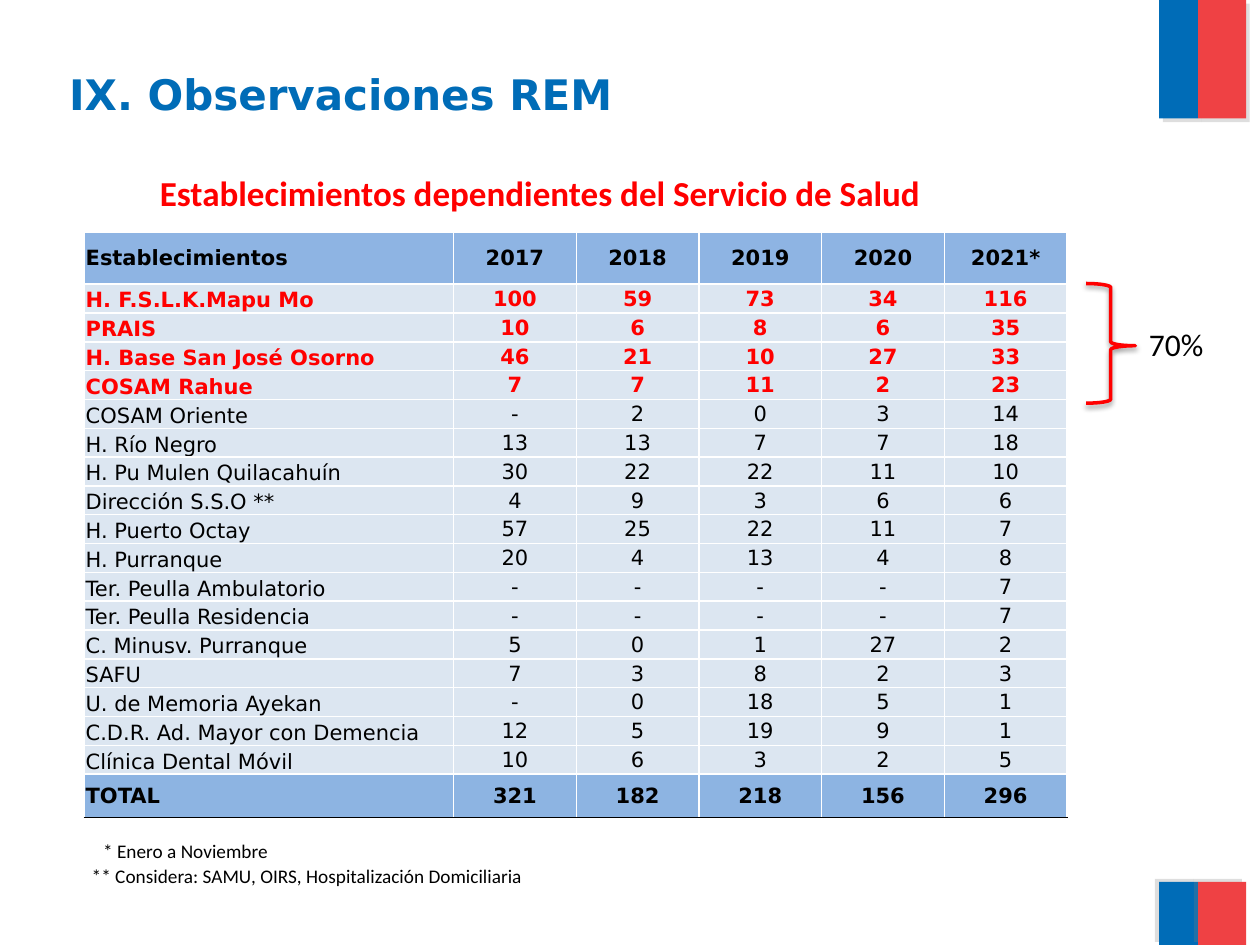
from typing import NamedTuple

from lxml.etree import SubElement
from pptx import Presentation
from pptx.dml.color import RGBColor
from pptx.enum.shapes import MSO_SHAPE
from pptx.enum.text import MSO_ANCHOR, MSO_AUTO_SIZE, PP_ALIGN
from pptx.oxml.ns import qn
from pptx.util import Emu, Inches, Pt

BLUE = RGBColor(0x00, 0x6C, 0xB7)
CORAL = RGBColor(0xEF, 0x41, 0x44)
RED = RGBColor(0xFF, 0x00, 0x00)
BLACK = RGBColor(0x00, 0x00, 0x00)
WHITE = RGBColor(0xFF, 0xFF, 0xFF)
GRAY = RGBColor(0x80, 0x80, 0x80)
HEAD = RGBColor(0x8E, 0xB4, 0xE3)
TOTAL = RGBColor(0x8D, 0xB4, 0xE2)
PALE = RGBColor(0xDC, 0xE6, 0xF1)

# The slide is a grid of 100 columns by 75 rows
WIDE, HIGH = Inches(10), Inches(7.5)
UNIT = WIDE / 100


def span(units: float) -> Emu:
    return Emu(round(units * UNIT))


class Box(NamedTuple):
    left: float
    top: float
    wide: float
    high: float

    def place(self) -> tuple:
        return tuple(span(part) for part in self)


class Shade(NamedTuple):
    color: RGBColor
    alpha: int
    blur: float
    dist: float
    angle: int


class Band(NamedTuple):
    box: Box
    fill: RGBColor
    shade: Shade


class Label(NamedTuple):
    text: str
    box: Box
    font: dict
    frame: dict
    indent: float = 0


class Style(NamedTuple):
    fill: RGBColor
    ink: RGBColor
    bold: bool
    anchor: MSO_ANCHOR
    base: tuple = (WHITE, 1)


def apply(target, values: dict) -> None:
    for name, value in values.items():
        setattr(target, name, value)


def write(para, text: str, font: dict) -> None:
    run = para.add_run()
    run.text = text
    apply(run.font, {key: val for key, val in font.items() if key != "ink"})
    run.font.color.rgb = font["ink"]


def cast(shape, shade: Shade) -> None:
    """Give a shape an outer shadow."""
    shape.shadow.inherit = False
    effects = shape._element.spPr.find(qn("a:effectLst"))
    outer = SubElement(effects, qn("a:outerShdw"), blurRad=str(Pt(shade.blur)),
                       dist=str(Pt(shade.dist)), dir=str(shade.angle * 60000),
                       algn="ctr", rotWithShape="0")
    color = SubElement(outer, qn("a:srgbClr"), val=str(shade.color))
    SubElement(color, qn("a:alpha"), val=str(shade.alpha * 1000))


def draw_band(shapes, band: Band) -> None:
    shape = shapes.add_shape(MSO_SHAPE.RECTANGLE, *band.box.place())
    shape.fill.solid()
    shape.fill.fore_color.rgb = band.fill
    shape.line.fill.background()
    cast(shape, band.shade)


def draw_label(shapes, label: Label) -> None:
    frame = shapes.add_textbox(*label.box.place()).text_frame
    apply(frame, label.frame)
    para = frame.paragraphs[0]
    if label.indent:
        props = para._p.get_or_add_pPr()
        props.set("marL", str(span(label.indent)))
        props.set("indent", "0")
    write(para, label.text, label.font)


def draw_brace(shapes, box: Box) -> None:
    brace = shapes.add_shape(MSO_SHAPE.RIGHT_BRACE, *box.place())
    brace.adjustments[0], brace.adjustments[1] = 0.08, 0.52
    brace.fill.background()
    brace.line.color.rgb = RED
    brace.line.width = Pt(2)
    cast(brace, Shade(BLACK, 38, 3.1, 1.6, 90))


def edge(cell, side: str, color: RGBColor, width: float) -> None:
    line = SubElement(cell._tc.get_or_add_tcPr(), qn("a:ln" + side), w=str(Pt(width)))
    fill = SubElement(line, qn("a:solidFill"))
    SubElement(fill, qn("a:srgbClr"), val=str(color))


def fill_cell(cell, text: str, style: Style, first: bool) -> None:
    for side in "LRT":
        edge(cell, side, WHITE, 1)
    edge(cell, "B", *style.base)
    cell.fill.solid()
    cell.fill.fore_color.rgb = style.fill
    apply(cell, dict(margin_left=span(0.1), margin_right=span(0.1),
                     margin_top=span(0.1), margin_bottom=0,
                     vertical_anchor=style.anchor if first else MSO_ANCHOR.MIDDLE))
    para = cell.text_frame.paragraphs[0]
    para.alignment = PP_ALIGN.LEFT if first else PP_ALIGN.CENTER
    write(para, text, dict(name="DejaVu Sans", size=Pt(12), bold=style.bold, ink=style.ink))


def draw_table(shapes, box: Box, cols: list, rows: list) -> None:
    table = shapes.add_table(len(rows), len(cols), *box.place()).table
    apply(table, dict(first_row=False, horz_banding=False))
    for col, wide in zip(table.columns, cols):
        col.width = span(wide)
    for at, (line, (high, style, texts)) in enumerate(zip(table.rows, rows)):
        line.height = span(high)
        for col, text in enumerate(texts):
            fill_cell(table.cell(at, col), text, style, col == 0)


# Flag bands: a tall pair on top and a short pair at the foot
UPPER = Shade(GRAY, 25, 0, 3, 45)
LOWER = Shade(GRAY, 25, 0, 3, 215)
BANDS = [Band(Box(left, top, wide, high), fill, shade)
         for top, high, shade in ((0, 9.4, UPPER), (70, 5, LOWER))
         for left, wide, fill in ((92, 3.1, BLUE), (95.1, 3.8, CORAL))]

# Text boxes
NOTE = dict(name="Calibri", size=Pt(11), ink=BLACK)
SNUG = dict(word_wrap=False, auto_size=MSO_AUTO_SIZE.SHAPE_TO_FIT_TEXT)
LABELS = [
    Label("IX. Observaciones REM", Box(4.5, 4.5, 89.3, 5.8),
          dict(name="DejaVu Sans", size=Pt(24), bold=True, ink=BLUE),
          dict(word_wrap=True, vertical_anchor=MSO_ANCHOR.MIDDLE)),
    Label("Establecimientos dependientes del Servicio de Salud", Box(6.7, 13.1, 88.3, 5),
          dict(name="Calibri", size=Pt(20), bold=True, ink=RED),
          dict(word_wrap=True), indent=5),
    Label("70%", Box(90.2, 25.3, 6.4, 4), dict(NOTE, size=Pt(18)), SNUG),
    Label("* Enero a Noviembre", Box(7.2, 66.1, 15.2, 2.9), NOTE, SNUG),
    Label("** Considera: SAMU, OIRS, Hospitalización Domiciliaria",
          Box(6.3, 68.1, 36.4, 2.9), NOTE, SNUG),
]

# Table rows: name, then one count per year
TOP = ("Establecimientos", "2017", "2018", "2019", "2020", "2021*")
SITES = [
    ("H. F.S.L.K.Mapu Mo", "100", "59", "73", "34", "116"),
    ("PRAIS", "10", "6", "8", "6", "35"),
    ("H. Base San José Osorno", "46", "21", "10", "27", "33"),
    ("COSAM Rahue", "7", "7", "11", "2", "23"),
    ("COSAM Oriente", "-", "2", "0", "3", "14"),
    ("H. Río Negro", "13", "13", "7", "7", "18"),
    ("H. Pu Mulen Quilacahuín", "30", "22", "22", "11", "10"),
    ("Dirección S.S.O **", "4", "9", "3", "6", "6"),
    ("H. Puerto Octay", "57", "25", "22", "11", "7"),
    ("H. Purranque", "20", "4", "13", "4", "8"),
    ("Ter. Peulla Ambulatorio", "-", "-", "-", "-", "7"),
    ("Ter. Peulla Residencia", "-", "-", "-", "-", "7"),
    ("C. Minusv. Purranque", "5", "0", "1", "27", "2"),
    ("SAFU", "7", "3", "8", "2", "3"),
    ("U. de Memoria Ayekan", "-", "0", "18", "5", "1"),
    ("C.D.R. Ad. Mayor con Demencia", "12", "5", "19", "9", "1"),
    ("Clínica Dental Móvil", "10", "6", "3", "2", "5"),
]
SUMS = ("TOTAL", "321", "182", "218", "156", "296")
MAIN = 4  # leading sites, shown in red
LEAD = Style(PALE, RED, True, MSO_ANCHOR.BOTTOM)
PLAIN = Style(PALE, BLACK, False, MSO_ANCHOR.BOTTOM)
ROWS = [(4.15, Style(HEAD, BLACK, True, MSO_ANCHOR.MIDDLE), TOP),
        *((2.29, LEAD if at < MAIN else PLAIN, site) for at, site in enumerate(SITES)),
        (3.45, Style(TOTAL, BLACK, True, MSO_ANCHOR.MIDDLE, (BLACK, 0.5)), SUMS)]
COLS = [29.3] + [9.74] * 5


def main() -> None:
    deck = Presentation()
    deck.slide_width, deck.slide_height = WIDE, HIGH
    shapes = deck.slides.add_slide(deck.slide_layouts[6]).shapes
    for band in BANDS:
        draw_band(shapes, band)
    draw_table(shapes, Box(6.7, 18.4, 78, 46.6), COLS, ROWS)
    draw_brace(shapes, Box(86.2, 22.5, 3.9, 9.5))
    for label in LABELS:
        draw_label(shapes, label)
    deck.save("out.pptx")


if __name__ == "__main__":
    main()
